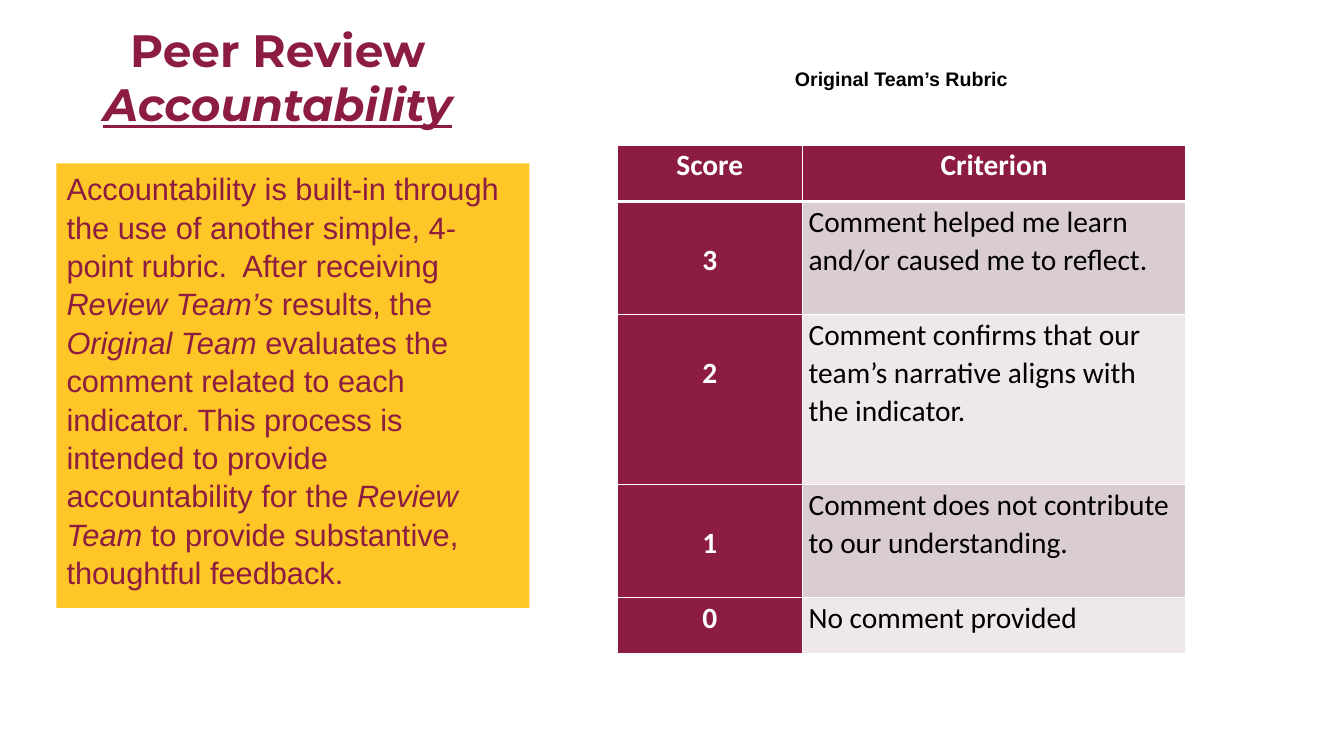
from dataclasses import dataclass

from lxml import etree
from pptx import Presentation
from pptx import util as u
from pptx.dml.color import RGBColor
from pptx.enum import text as tx
from pptx.oxml import ns

MAROON = RGBColor(0x8C, 0x1D, 0x40)
GOLD = RGBColor(0xFF, 0xC6, 0x27)
WHITE = RGBColor(0xFF, 0xFF, 0xFF)
BLACK = RGBColor(0, 0, 0)
DARK = RGBColor(0xDA, 0xCD, 0xCF)
LIGHT = RGBColor(0xEE, 0xE8, 0xE8)
LEFT, MID = tx.PP_ALIGN.LEFT, tx.PP_ALIGN.CENTER


@dataclass
class Run:
    text: str
    slant: bool = False
    line: bool = False


@dataclass
class Row:
    score: str
    note: str
    high: float
    drop: float = 0


TITLE = [Run("Peer Review "), Run("Accountability", True, True)]
LABEL = [Run("Original Team’s Rubric")]
BODY = [
    Run("Accountability is built-in through the use of another simple, "
        "4-point rubric.  After receiving "),
    Run("Review Team’s ", True),
    Run("results, the  "),
    Run("Original Team ", True),
    Run("evaluates the comment related to each indicator. This process is "
        "intended to provide accountability for the "),
    Run("Review Team ", True),
    Run("to provide substantive, thoughtful feedback."),
]
ROWS = [
    Row("Score", "Criterion", 0.56),
    Row("3", "Comment helped me learn and/or caused me to reflect.", 1.12, 0.38),
    Row("2", "Comment confirms that our team’s narrative aligns with "
        "the indicator.", 1.69, 0.38),
    Row("1", "Comment does not contribute to our understanding.", 1.12, 0.38),
    Row("0", "No comment provided", 0.56),
]
COLS = [1.84, 3.8]


def write(frame, runs: list[Run], *, size: float, face: str, hue: RGBColor,
          bold: bool = False, align=LEFT, space: float = 1.0) -> None:
    para = frame.paragraphs[0]
    props = para._p.get_or_add_pPr()
    props.set("marL", "0")
    props.set("indent", "0")
    etree.SubElement(props, ns.qn("a:buNone"))
    para.alignment = align
    para.line_spacing = space
    para.space_before = u.Pt(0)
    for item in runs:
        run = para.add_run()
        run.text = item.text
        font = run.font
        font.size, font.name, font.bold = u.Pt(size), face, bold
        font.italic, font.underline = item.slant, item.line
        font.color.rgb = hue


def place(shape, left: float, top: float, wide: float, high: float,
          runs: list[Run], anchor=tx.MSO_ANCHOR.TOP, **style) -> None:
    shape.left, shape.top = u.Inches(left), u.Inches(top)
    shape.width, shape.height = u.Inches(wide), u.Inches(high)
    frame = shape.text_frame
    frame.word_wrap = True
    frame.auto_size = tx.MSO_AUTO_SIZE.NONE
    frame.vertical_anchor = anchor
    write(frame, runs, **style)


def edge(cell, side: str, width: float) -> None:
    props = cell._tc.get_or_add_tcPr()
    line = etree.SubElement(props, ns.qn(f"a:ln{side}"), w=str(u.Pt(width)))
    fill = etree.SubElement(line, ns.qn("a:solidFill"))
    etree.SubElement(fill, ns.qn("a:srgbClr"), val=str(WHITE))


def paint(cell, label: str, fill: RGBColor, drop: float, widths: dict[str, float],
          **style) -> None:
    cell.margin_left = cell.margin_right = u.Inches(0.06)
    cell.margin_top, cell.margin_bottom = u.Inches(drop), 0
    for side, width in widths.items():
        edge(cell, side, width)
    cell.fill.solid()
    cell.fill.fore_color.rgb = fill
    write(cell.text_frame, [Run(label)], size=21, face="Calibri", space=1.07, **style)


def grid(slide) -> None:
    high = sum(row.high for row in ROWS)
    table = slide.shapes.add_table(
        len(ROWS), len(COLS), u.Inches(6.12), u.Inches(1.44),
        u.Inches(sum(COLS)), u.Inches(high)).table
    for col, wide in zip(table.columns, COLS):
        col.width = u.Inches(wide)
    strong = dict(hue=WHITE, bold=True, align=MID)
    for i, row in enumerate(ROWS):
        table.rows[i].height = u.Inches(row.high)
        widths = {"L": 1, "R": 1, "T": 3 if i == 1 else 1, "B": 3 if i == 0 else 1}
        paint(table.cell(i, 0), row.score, MAROON, row.drop, widths, **strong)
        tint = MAROON if i == 0 else DARK if i % 2 else LIGHT
        style = strong if i == 0 else dict(hue=BLACK)
        paint(table.cell(i, 1), row.note, tint, 0, widths, **style)


def main() -> None:
    deck = Presentation()
    deck.slide_width, deck.slide_height = u.Inches(13.33), u.Inches(7.5)
    slide = deck.slides.add_slide(deck.slide_layouts.get_by_name("Content with Caption"))
    title, body, label = slide.placeholders
    place(title, 0.56, 0.08, 4.39, 1.27, TITLE, tx.MSO_ANCHOR.BOTTOM,
          size=32.4, face="Montserrat", hue=MAROON, bold=True, align=MID)
    place(label, 6.12, 0.61, 5.64, 0.5, LABEL,
          size=14, face="Arial", hue=BLACK, bold=True, align=MID)
    place(body, 0.56, 1.62, 4.69, 4.41, BODY,
          size=22, face="Arial", hue=MAROON, space=1.04)
    body.fill.solid()
    body.fill.fore_color.rgb = GOLD
    grid(slide)
    deck.save("out.pptx")


if __name__ == "__main__":
    main()
